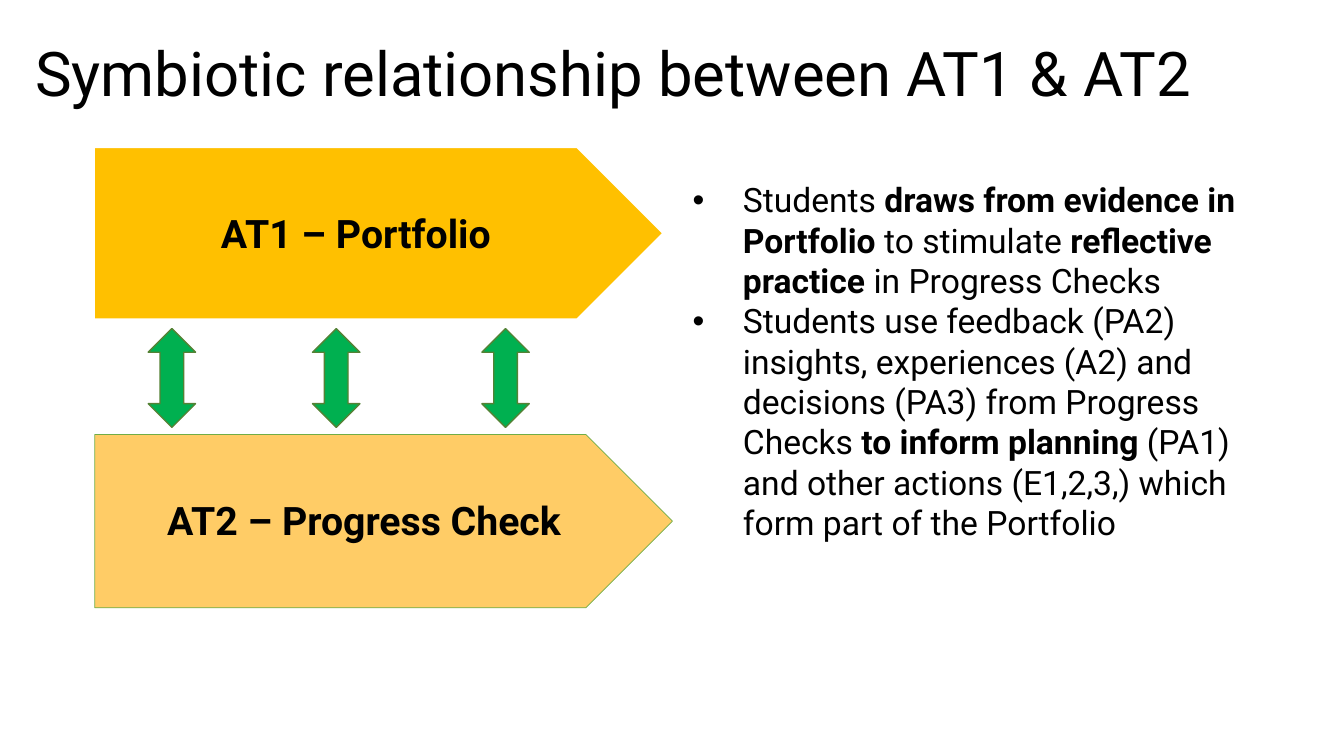
from lxml import etree
from pptx import Presentation
from pptx.dml.color import RGBColor
from pptx.enum.shapes import MSO_SHAPE
from pptx.enum.text import MSO_ANCHOR, MSO_AUTO_SIZE, PP_ALIGN
from pptx.oxml.ns import qn
from pptx.util import Inches, Pt

PENTAGON = MSO_SHAPE.PENTAGON
DOUBLE_ARROW = MSO_SHAPE.UP_DOWN_ARROW
ROUNDED = MSO_SHAPE.ROUNDED_RECTANGLE
MIDDLE = MSO_ANCHOR.MIDDLE
CENTER = PP_ALIGN.CENTER
LEFT = PP_ALIGN.LEFT
FIT_SHAPE = MSO_AUTO_SIZE.SHAPE_TO_FIT_TEXT

FONT = "Roboto"
BLACK = "000000"

# label, pentagon place, label left and top, fill, line colour, line width
TASKS = [
    ("AT2 – Progress Check", (0.94, 4.31, 5.73, 1.72), (0.84, 4.86), "FFCC66", "70AD47", 0.5),
    ("AT1 – Portfolio", (0.93, 1.46, 5.65, 1.71), (0.76, 2.01), "FFC000", "FFFFFF", 1.5),
]
ARROW_LEFTS = [1.47, 3.1, 4.78]

# each point is a list of (text, bold)
POINTS = [
    [
        ("Students ", False),
        ("draws from evidence in Portfolio", True),
        (" to stimulate ", False),
        ("reflective practice", True),
        (" in Progress Checks", False),
    ],
    [
        ("Students use feedback (PA2) insights, experiences (A2) and decisions (PA3) "
         "from Progress Checks ", False),
        ("to inform planning", True),
        (" (PA1) and other actions (E1,2,3,) which form part of the Portfolio", False),
    ],
]


def color(value):
    return RGBColor.from_string(value)


def lengths(place):
    return [Inches(value) for value in place]


def format_span(span, size, bold=False):
    span.font.name = FONT
    span.font.size = Pt(size)
    span.font.bold = bold
    span.font.color.rgb = color(BLACK)


def add_title(slide, text, place):
    title = slide.shapes.title
    title.left, title.top, title.width, title.height = lengths(place)
    frame = title.text_frame
    frame.text = text
    frame.word_wrap = True
    frame.vertical_anchor = MIDDLE
    para = frame.paragraphs[0]
    para.alignment = LEFT
    para.line_spacing = 0.9
    format_span(para.runs[0], 44)


def add_filled_shape(slide, kind, place, fill, line, line_width):
    shape = slide.shapes.add_shape(kind, *lengths(place))
    shape.shadow.inherit = False
    shape.fill.solid()
    shape.fill.fore_color.rgb = color(fill)
    shape.line.color.rgb = color(line)
    shape.line.width = Pt(line_width)


def add_label(slide, text, place):
    label = slide.shapes.add_shape(ROUNDED, *lengths(place))
    label.shadow.inherit = False
    label.fill.background()
    label.line.fill.background()
    frame = label.text_frame
    frame.text = text
    frame.word_wrap = True
    frame.vertical_anchor = MIDDLE
    para = frame.paragraphs[0]
    para.alignment = CENTER
    format_span(para.runs[0], 28, bold=True)


def set_bullet(para, indent):
    properties = para._p.get_or_add_pPr()
    properties.set("marL", str(Inches(indent)))
    properties.set("indent", str(-Inches(indent)))
    etree.SubElement(properties, qn("a:buFont")).set("typeface", "Arial")
    etree.SubElement(properties, qn("a:buChar")).set("char", "•")


def add_points(slide, points, place):
    box = slide.shapes.add_textbox(*lengths(place))
    frame = box.text_frame
    frame.word_wrap = True
    frame.auto_size = FIT_SHAPE
    for index, point in enumerate(points):
        para = frame.add_paragraph() if index else frame.paragraphs[0]
        set_bullet(para, 0.5)
        for text, bold in point:
            span = para.add_run()
            span.text = text
            format_span(span, 24, bold)


def main():
    deck = Presentation()
    deck.slide_width = Inches(13.33)
    deck.slide_height = Inches(7.5)
    slide = deck.slides.add_slide(deck.slide_layouts.get_by_name("Title Only"))

    add_title(slide, "Symbiotic relationship between AT1 & AT2", (0.25, 0.03, 12.1, 1.45))
    for text, place, label_corner, fill, line, line_width in TASKS:
        add_filled_shape(slide, PENTAGON, place, fill, line, line_width)
        add_label(slide, text, (*label_corner, 5.54, 0.6))
    for left in ARROW_LEFTS:
        add_filled_shape(slide, DOUBLE_ARROW, (left, 3.26, 0.47, 0.98), "00B050", "548235", 1)
    add_points(slide, POINTS, (6.77, 1.73, 5.81, 3.74))

    deck.save("out.pptx")


if __name__ == "__main__":
    main()
